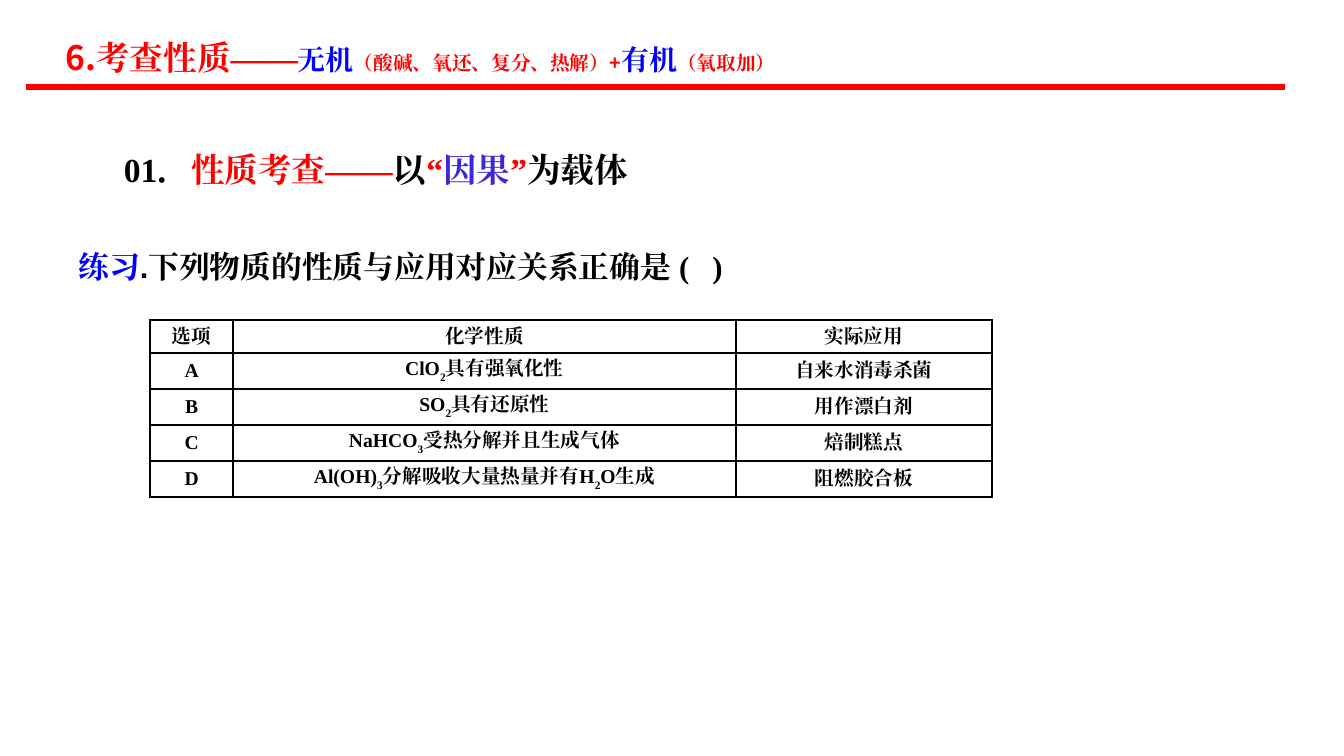
"""Build a chemistry practice slide on properties and their applications."""
import pptx
import pptx.dml.color
import pptx.enum.shapes
import pptx.enum.text
import pptx.oxml.ns
import pptx.util
from lxml import etree

Pt = pptx.util.Pt
qn = pptx.oxml.ns.qn
COLORS = {"red": "FF0000", "blue": "0000FF", "violet": "3C28D6", "black": "000000"}
SERIF, SANS, HEADING = "Times New Roman", "Arial", "Noto Sans CJK SC"
COLUMN_WIDTHS = (59, 359.3, 182.9)
ROW_HEIGHT = 24
ROWS = (
    ("选项", "化学性质", "实际应用"),
    ("A", "ClO_2_具有强氧化性", "自来水消毒杀菌"),
    ("B", "SO_2_具有还原性", "用作漂白剂"),
    ("C", "NaHCO_3_受热分解并且生成气体", "焙制糕点"),
    ("D", "Al(OH)_3_分解吸收大量热量并有H_2_O生成", "阻燃胶合板"),
)


def rgb(name):
    return pptx.dml.color.RGBColor.from_string(COLORS[name])


def add_run(paragraph, text, size, font=SERIF, color="black"):
    run = paragraph.add_run()
    run.text = text
    run.font.size = Pt(size)
    run.font.bold = True
    run.font.name = font
    run.font.color.rgb = rgb(color)
    properties = run._r.get_or_add_rPr()
    etree.SubElement(properties, qn("a:ea"), typeface=SERIF)
    return properties


def place(shape, left, top, width, height):
    shape.left, shape.top = Pt(left), Pt(top)
    shape.width, shape.height = Pt(width), Pt(height)


def add_title(slide, runs):
    title = slide.shapes.title
    place(title, 41, 19.4, 829.4, 42.5)
    frame = title.text_frame
    frame.word_wrap = True
    frame.auto_size = pptx.enum.text.MSO_AUTO_SIZE.NONE
    frame.vertical_anchor = pptx.enum.text.MSO_ANCHOR.MIDDLE
    frame.margin_left = frame.margin_right = Pt(5.8)
    frame.margin_top = frame.margin_bottom = Pt(2.9)
    paragraph = frame.paragraphs[0]
    paragraph.alignment = pptx.enum.text.PP_ALIGN.LEFT
    for text, size, color in runs:
        add_run(paragraph, text, size, HEADING, color)


def add_text_line(slide, box, size, runs, hanging=0):
    shape = slide.shapes.add_textbox(*(Pt(length) for length in box))
    frame = shape.text_frame
    frame.word_wrap = True
    frame.auto_size = pptx.enum.text.MSO_AUTO_SIZE.SHAPE_TO_FIT_TEXT
    paragraph = frame.paragraphs[0]
    if hanging:
        properties = paragraph._p.get_or_add_pPr()
        properties.set("marL", str(Pt(hanging)))
        properties.set("indent", str(-Pt(hanging)))
    for text, font, color in runs:
        add_run(paragraph, text, size, font, color)


def add_rule(slide):
    rule = slide.shapes.add_connector(
        pptx.enum.shapes.MSO_CONNECTOR.STRAIGHT, Pt(18.7), Pt(62), Pt(918), Pt(62))
    rule.line.color.rgb = rgb("red")
    rule.line.width = Pt(4.5)
    etree.SubElement(rule._element.spPr, qn("a:effectLst"))


def add_borders(cell):
    properties = cell._tc.get_or_add_tcPr()
    for index, side in enumerate(("lnL", "lnR", "lnT", "lnB")):
        line = etree.Element(qn("a:" + side), w=str(Pt(1.5)))
        fill = etree.SubElement(line, qn("a:solidFill"))
        etree.SubElement(fill, qn("a:srgbClr"), val=COLORS["black"])
        properties.insert(index, line)


def fill_cell(cell, text):
    cell.fill.background()
    add_borders(cell)
    cell.vertical_anchor = pptx.enum.text.MSO_ANCHOR.MIDDLE
    cell.margin_left = cell.margin_right = Pt(9.4)
    cell.margin_top = cell.margin_bottom = Pt(3.6)
    paragraph = cell.text_frame.paragraphs[0]
    paragraph.alignment = pptx.enum.text.PP_ALIGN.CENTER
    for index, part in enumerate(text.split("_")):
        properties = add_run(paragraph, part, 14)
        if index % 2:
            properties.set("baseline", "-30000")


def add_options_table(slide):
    table = slide.shapes.add_table(
        len(ROWS), len(COLUMN_WIDTHS), Pt(107.4), Pt(228.4),
        Pt(sum(COLUMN_WIDTHS)), Pt(ROW_HEIGHT * len(ROWS))).table
    table.first_row = table.horz_banding = False
    for column, width in zip(table.columns, COLUMN_WIDTHS):
        column.width = Pt(width)
    for row, texts in zip(table.rows, ROWS):
        row.height = Pt(ROW_HEIGHT)
        for cell, text in zip(row.cells, texts):
            fill_cell(cell, text)


def main():
    presentation = pptx.Presentation()
    presentation.slide_width, presentation.slide_height = Pt(960), Pt(540)
    slide = presentation.slides.add_slide(presentation.slide_layouts[5])
    add_rule(slide)
    add_title(slide, (
        ("6.考查性质——", 24, "red"),
        ("无机", 20, "blue"),
        ("（酸碱、氧还、复分、热解）+", 14, "red"),
        ("有机", 20, "blue"),
        ("（氧取加）", 14, "red"),
    ))
    add_options_table(slide)
    add_text_line(slide, (49, 173.5, 831, 34), 22, (
        ("练习", SANS, "blue"),
        (".下列物质的性质与应用对应关系正确是\t", SANS, "black"),
        ("(   )", SERIF, "black"),
    ), hanging=33)
    add_text_line(slide, (81.4, 103, 533.5, 36), 24, (
        ("01", SERIF, "black"),
        ("．", SANS, "black"),
        ("性质考查——", SERIF, "red"),
        ("以", SERIF, "black"),
        ("“", SERIF, "red"),
        ("因果", SERIF, "violet"),
        ("”", SERIF, "red"),
        ("为载体", SERIF, "black"),
    ))
    presentation.save("out.pptx")


if __name__ == "__main__":
    main()
